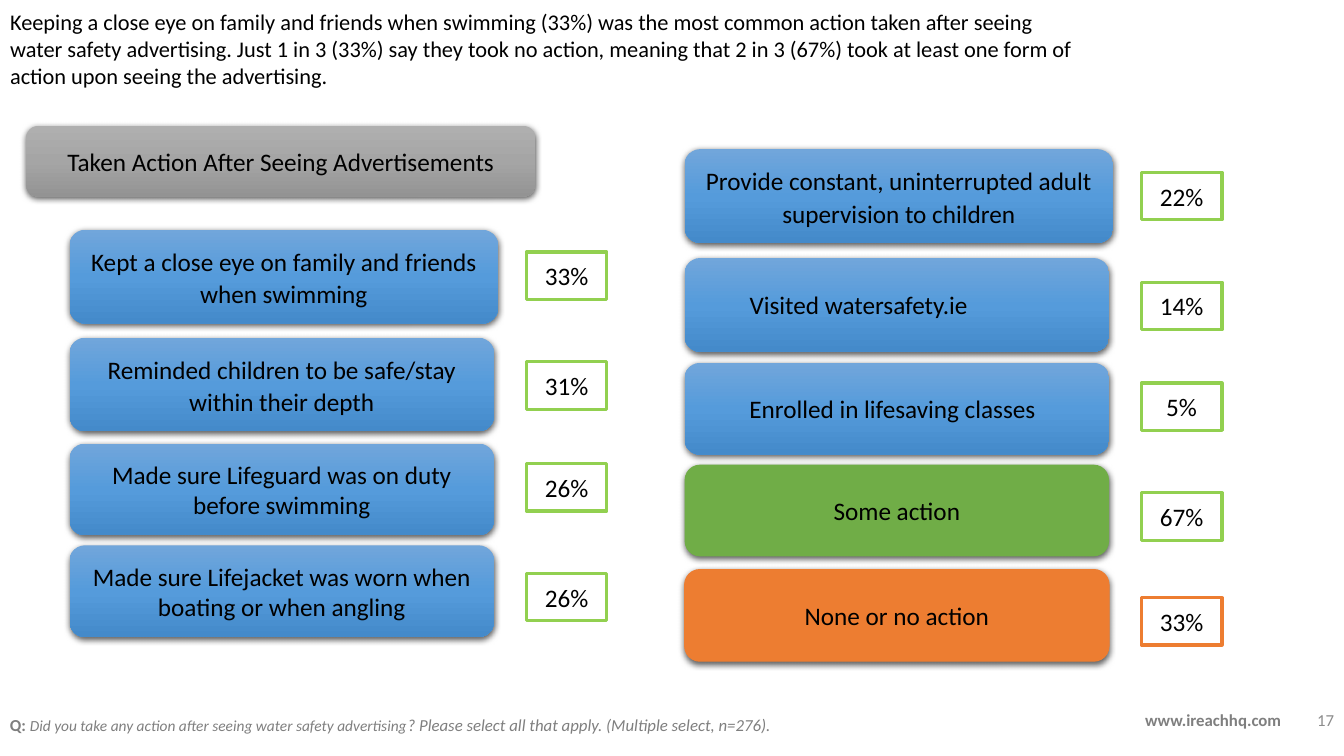
from copy import deepcopy
from dataclasses import dataclass

from lxml import etree
from pptx import Presentation
from pptx.dml.color import RGBColor
from pptx.enum import shapes, text
from pptx.oxml import ns
from pptx.util import Emu, Pt

PX = 9144  # 100 px to the inch
FONT = "Calibri"
BLUE = ("71A6DB", "559BDB", "448ACA")
GRAY = ("AFAFAF", "A5A5A5", "939393")
GREEN, ORANGE, LIME = ("70AD47",), ("ED7D31",), "92D050"
CENTER, RIGHT, LEFT = text.PP_ALIGN.CENTER, text.PP_ALIGN.RIGHT, text.PP_ALIGN.LEFT


@dataclass
class Row:
    label: str
    share: str
    top: int
    mark: int  # top of the share box
    wide: int = 421
    high: int = 91
    fill: tuple[str, ...] = BLUE
    edge: str = LIME
    indent: int = 0
    loose: bool = False  # wider line spacing and space after


def rgb(code: str) -> RGBColor:
    return RGBColor.from_string(code)


def px(*sizes: int) -> list[Emu]:
    return [Emu(size * PX) for size in sizes]


def style(para, size: float, color: str, align=LEFT) -> None:
    para.alignment = align
    font = para.font
    font.name, font.size = FONT, Pt(size)
    font.color.rgb = rgb(color)


def paint(shape, colors: tuple[str, ...]) -> None:
    fill = shape.fill
    if len(colors) == 1:
        fill.solid()
        fill.fore_color.rgb = rgb(colors[0])
        return
    fill.gradient()
    fill.gradient_angle = 270
    stops = shape._element.spPr.find(".//" + ns.qn("a:gsLst"))
    stops.insert(1, deepcopy(stops[0]))
    for stop, place, color in zip(fill.gradient_stops, (0, 0.5, 1), colors):
        stop.position = place
        stop.color.rgb = rgb(color)


def shade(shape) -> None:
    effects = shape._element.spPr.find(ns.qn("a:effectLst"))
    shadow = etree.SubElement(effects, ns.qn("a:outerShdw"), blurRad="57150",
                              dist="19050", dir="5400000", algn="ctr", rotWithShape="0")
    color = etree.SubElement(shadow, ns.qn("a:srgbClr"), val="000000")
    etree.SubElement(color, ns.qn("a:alpha"), val="63000")


def box(slide, kind, place: tuple[int, ...], label: str, colors: tuple[str, ...]):
    shape = slide.shapes.add_shape(kind, *px(*place))
    shape.shadow.inherit = False
    paint(shape, colors)
    shape.line.fill.background()
    frame = shape.text_frame
    frame.word_wrap = True
    frame.vertical_anchor = text.MSO_ANCHOR.MIDDLE
    frame.text = label
    style(frame.paragraphs[0], 18, "000000", CENTER)
    return shape


def card(slide, place: tuple[int, ...], label: str, colors: tuple[str, ...]):
    shape = box(slide, shapes.MSO_SHAPE.ROUNDED_RECTANGLE, place, label, colors)
    shade(shape)
    return shape


def draw(slide, row: Row, left: int) -> None:
    shape = card(slide, (left, row.top, row.wide, row.high), row.label, row.fill)
    para = shape.text_frame.paragraphs[0]
    if row.indent:
        para.alignment = LEFT
        para._p.get_or_add_pPr().set("marL", str(row.indent * PX))
    if row.loose:
        para.line_spacing, para.space_after = 1.07, Pt(8)
    if row.fill == ORANGE:
        shape.line.color.rgb = rgb(ORANGE[0])
        shape.line.width = Pt(0.75)
    mark = box(slide, shapes.MSO_SHAPE.RECTANGLE, (left + 453, row.mark, 80, 47),
               row.share, ("FFFFFF",))
    mark.line.color.rgb = rgb(row.edge)
    mark.line.width = Pt(2.25)


def note(slide, place: tuple[int, ...], label: str, color: str, align=LEFT):
    frame = slide.shapes.add_textbox(*px(*place)).text_frame
    frame.word_wrap = True
    frame.vertical_anchor = text.MSO_ANCHOR.MIDDLE
    frame.text = label
    para = frame.paragraphs[0]
    style(para, 12, color, align)
    return para


COLUMNS = {
    69: [
        Row("Kept a close eye on family and friends when swimming", "33%", 228, 250,
            wide=425, high=93, loose=True),
        Row("Reminded children to be safe/stay within their depth", "31%", 335, 359,
            high=93, loose=True),
        Row("Made sure Lifeguard was on duty before swimming", "26%", 440, 460),
        Row("Made sure Lifejacket was worn when boating or when angling", "26%", 541, 569),
    ],
    679: [
        Row("Provide constant, uninterrupted adult supervision to children", "22%", 148, 171,
            wide=425, high=93, loose=True),
        Row("Visited watersafety.ie", "14%", 256, 280, high=93, indent=50),
        Row("Enrolled in lifesaving classes", "5%", 360, 380, indent=50),
        Row("Some action", "67%", 461, 489, fill=GREEN),
        Row("None or no action", "33%", 565, 593, fill=ORANGE, edge=ORANGE[0]),
    ],
}


def main() -> None:
    deck = Presentation()
    deck.slide_width, deck.slide_height = px(1333, 750)
    slide = deck.slides.add_slide(deck.slide_layouts[5])

    # Headline
    title = slide.shapes.title
    title.left, title.top, title.width, title.height = px(0, 3, 1084, 91)
    frame = title.text_frame
    frame.text = (
        "Keeping a close eye on family and friends when swimming (33%) was the most "
        "common action taken after seeing water safety advertising. Just 1 in 3 (33%) "
        "say they took no action, meaning that 2 in 3 (67%) took at least one form of "
        "action upon seeing the advertising.")
    frame.word_wrap = True
    frame.auto_size = text.MSO_AUTO_SIZE.SHAPE_TO_FIT_TEXT
    frame.vertical_anchor = text.MSO_ANCHOR.TOP
    style(frame.paragraphs[0], 16, "000000")

    # Actions and their shares
    card(slide, (26, 125, 505, 70), "Taken Action After Seeing Advertisements", GRAY)
    for left, rows in COLUMNS.items():
        for row in rows:
            draw(slide, row, left)

    # Survey question
    para = note(slide, (0, 704, 1126, 30), "Q: ", "7F7F7F")
    para.runs[0].font.bold = True
    for words, size in (
        ("Did you take any action after seeing water safety advertising", 11),
        ("? Please select all that apply. (Multiple select, n=276).", 12),
    ):
        run = para.add_run()
        run.text = words
        run.font.size, run.font.italic = Pt(size), True

    # Site and page number
    site = note(slide, (1126, 696, 187, 38), "www.ireachhq.com", "7F7F7F")
    site.font.bold = True
    site.line_spacing = 0.9
    note(slide, (1033, 694, 300, 40), "17", "8C8C8C", RIGHT)

    deck.save("out.pptx")


if __name__ == "__main__":
    main()
